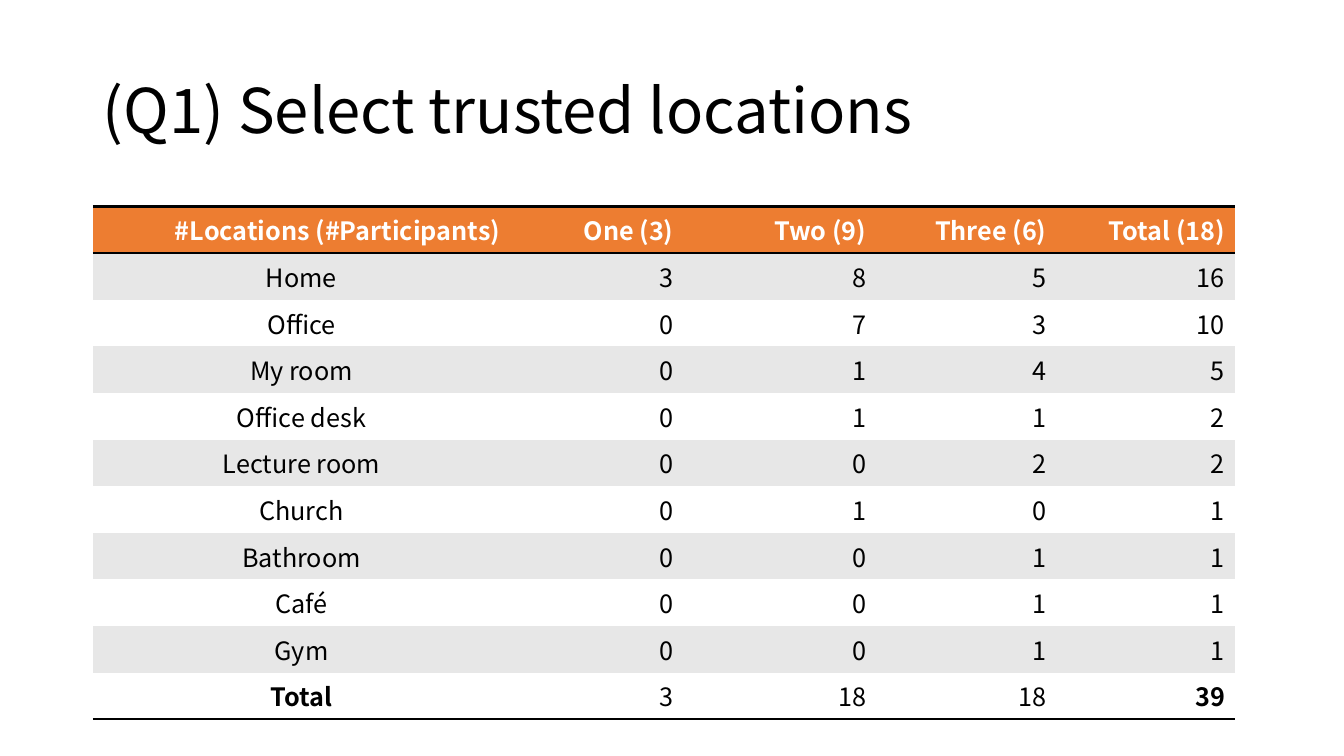
from lxml import etree
from pptx import Presentation
from pptx import util as u
from pptx.dml.color import RGBColor
from pptx.enum import text
from pptx.oxml import ns

BLACK = RGBColor(0x00, 0x00, 0x00)
WHITE = RGBColor(0xFF, 0xFF, 0xFF)
ORANGE = RGBColor(0xED, 0x7D, 0x31)
GRAY = RGBColor(0xE7, 0xE7, 0xE7)

NO_STYLE = "{2D5ABB26-0587-4C30-8999-92F81FD0307C}"
COLUMN_WIDTHS = [4.14, 1.72, 1.91, 1.79, 1.77]
ROW_HEIGHT = 0.41
LOCATION_ROWS = [
    ["#Locations (#Participants)", "One (3)", "Two (9)", "Three (6)", "Total (18)"],
    ["Home", 3, 8, 5, 16],
    ["Office", 0, 7, 3, 10],
    ["My room", 0, 1, 4, 5],
    ["Office desk", 0, 1, 1, 2],
    ["Lecture room", 0, 0, 2, 2],
    ["Church", 0, 1, 0, 1],
    ["Bathroom", 0, 0, 1, 1],
    ["Café", 0, 0, 1, 1],
    ["Gym", 0, 0, 1, 1],
    ["Total", 3, 18, 18, 39],
]


class SlideBuilder:
    font_name = "Noto Sans CJK KR"
    title_size = 44
    table_size = 18
    rule_width = 2

    def __init__(self, presentation):
        self.slide = presentation.slides.add_slide(presentation.slide_layouts[5])

    def add_run(self, paragraph, words, size, color, bold=False):
        run = paragraph.add_run()
        run.text = words
        run.font.name = self.font_name
        run.font.size = u.Pt(size)
        run.font.color.rgb = color
        run.font.bold = bold

    def title(self, words, left, top, width, height):
        shape = self.slide.shapes.title
        shape.left, shape.top = u.Inches(left), u.Inches(top)
        shape.width, shape.height = u.Inches(width), u.Inches(height)
        frame = shape.text_frame
        frame.word_wrap = True
        frame.auto_size = text.MSO_AUTO_SIZE.NONE
        frame.vertical_anchor = text.MSO_ANCHOR.MIDDLE
        paragraph = frame.paragraphs[0]
        paragraph.alignment = text.PP_ALIGN.LEFT
        paragraph.line_spacing = 0.9
        self.add_run(paragraph, words, self.title_size, BLACK)

    def cell_rules(self, cell, sides):
        properties = cell._tc.get_or_add_tcPr()
        for position, side in enumerate(sides):
            line = etree.Element(ns.qn(f"a:ln{side}"), w=str(u.Pt(self.rule_width)))
            fill = etree.SubElement(line, ns.qn("a:solidFill"))
            etree.SubElement(fill, ns.qn("a:srgbClr"), val=str(BLACK))
            properties.insert(position, line)

    def table(self, rows, left, top, widths, row_height):
        shape = self.slide.shapes.add_table(
            len(rows), len(widths), u.Inches(left), u.Inches(top),
            u.Inches(sum(widths)), u.Inches(row_height * len(rows)))
        table = shape.table
        table.horz_banding = False
        table._tbl.tblPr.find(ns.qn("a:tableStyleId")).text = NO_STYLE
        for column, width in zip(table.columns, widths):
            column.width = u.Inches(width)
        last_row, last_column = len(rows) - 1, len(widths) - 1
        for row_index, values in enumerate(rows):
            table.rows[row_index].height = u.Inches(row_height)
            header, total = row_index == 0, row_index == last_row
            for column_index, value in enumerate(values):
                cell = table.cell(row_index, column_index)
                cell.fill.solid()
                cell.fill.fore_color.rgb = ORANGE if header else (WHITE, GRAY)[row_index % 2]
                self.cell_rules(cell, "TB" if header else "B" if total else "")
                paragraph = cell.text_frame.paragraphs[0]
                centered = column_index == 0 and not header
                paragraph.alignment = text.PP_ALIGN.CENTER if centered else text.PP_ALIGN.RIGHT
                bold = header or (total and column_index in (0, last_column))
                self.add_run(paragraph, str(value), self.table_size,
                             WHITE if header else BLACK, bold)


def main():
    presentation = Presentation()
    presentation.slide_width = u.Inches(13.33)
    presentation.slide_height = u.Inches(7.5)
    builder = SlideBuilder(presentation)
    builder.title("(Q1) Select trusted locations", 0.92, 0.4, 11.5, 1.45)
    builder.table(LOCATION_ROWS, 0.92, 2.05, COLUMN_WIDTHS, ROW_HEIGHT)
    presentation.save("out.pptx")


if __name__ == "__main__":
    main()
